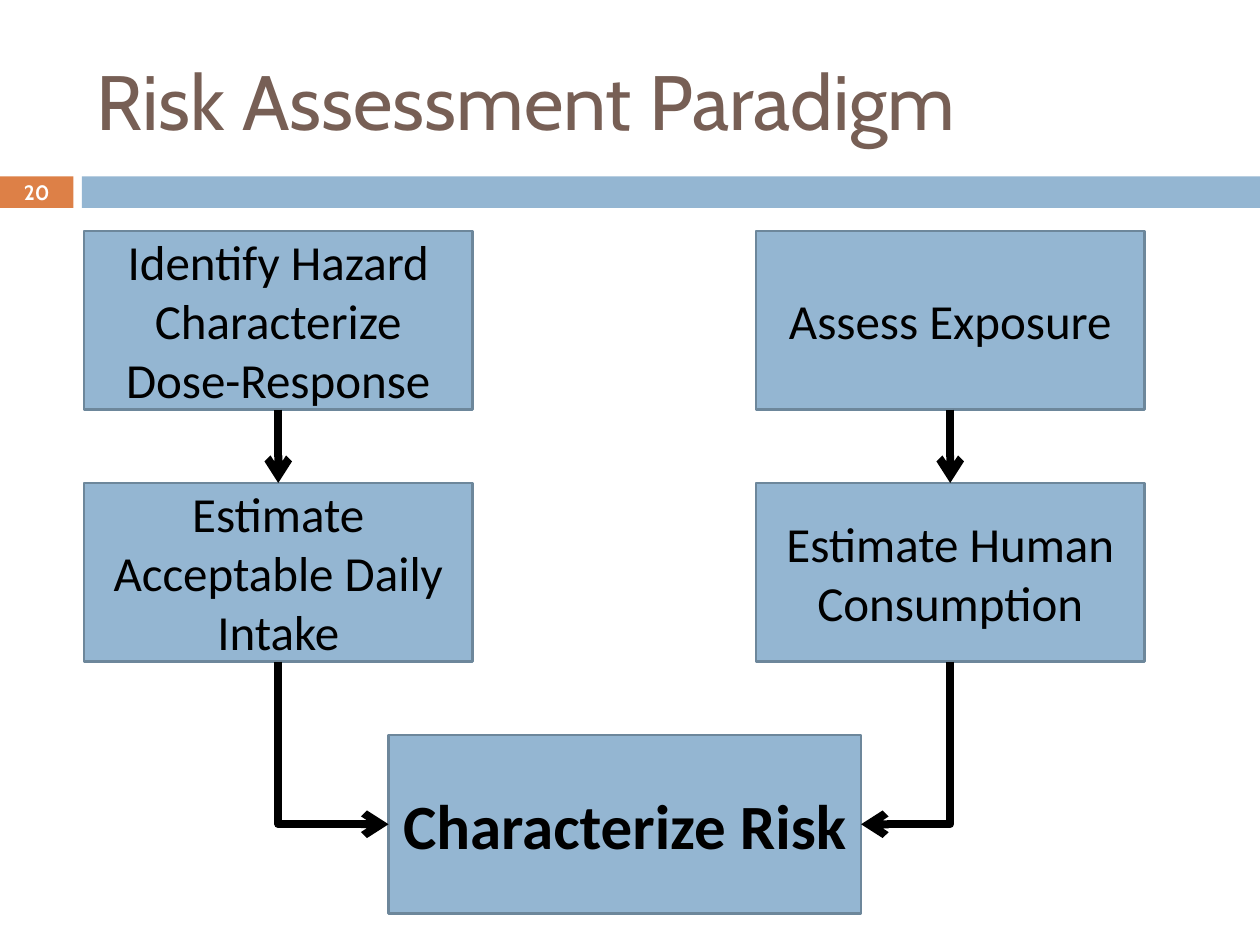
"""Build the risk assessment flow slide."""
from dataclasses import dataclass
from typing import Optional

from lxml.etree import SubElement
from pptx import Presentation
from pptx.dml.color import RGBColor
from pptx.enum.shapes import MSO_CONNECTOR as CONN, MSO_SHAPE as SHAPE
from pptx.enum.text import MSO_ANCHOR as ANCHOR, PP_ALIGN as ALIGN
from pptx.oxml.ns import qn
from pptx.util import Pt

BLUE, EDGE, ORANGE, BROWN = "94B6D2", "6D879B", "DD8047", "775F55"
BLACK, WHITE = "000000", "FFFFFF"
LEFT, RIGHT, MIDDLE = 48, 432, 222
ROWS = [132 + 144 * i for i in range(3)]
BODY = {"name": "Calibri", "size": Pt(28), "bold": False}
RESULT = {"name": "Calibri", "size": Pt(36), "bold": True}
TITLE = {"name": "Cabin", "size": Pt(44), "bold": False}
NUMBER = {"name": "Cabin", "size": Pt(11.9), "bold": True}
BOTTOM, TOP, LEFT_SIDE, RIGHT_SIDE = 2, 0, 1, 3


@dataclass
class Box:
    text: str
    x: float
    y: float
    w: float = 222
    h: float = 102
    fmt: Optional[dict] = None


@dataclass
class Arrow:
    start: str
    end: str
    side: int = TOP


BOXES = [
    Box("Identify Hazard Characterize Dose-Response", LEFT, ROWS[0]),
    Box("Assess Exposure", RIGHT, ROWS[0]),
    Box("Estimate Acceptable Daily Intake", LEFT, ROWS[1]),
    Box("Estimate Human Consumption", RIGHT, ROWS[1]),
    Box("Characterize Risk", MIDDLE, ROWS[2], w=270, fmt=RESULT),
]
ARROWS = [
    Arrow(BOXES[0].text, BOXES[2].text),
    Arrow(BOXES[1].text, BOXES[3].text),
    Arrow(BOXES[2].text, BOXES[4].text, LEFT_SIDE),
    Arrow(BOXES[3].text, BOXES[4].text, RIGHT_SIDE),
]


def rgb(color: str) -> RGBColor:
    """Turn a hex string into a colour."""
    return RGBColor.from_string(color)


def add_rect(s, x: float, y: float, w: float, h: float, fill: str, line: Optional[str] = None):
    """Draw a flat rectangle, outlined when a line colour is given."""
    sp = s.shapes.add_shape(SHAPE.RECTANGLE, Pt(x), Pt(y), Pt(w), Pt(h))
    sp.shadow.inherit = False
    sp.fill.solid()
    sp.fill.fore_color.rgb = rgb(fill)
    if line:
        sp.line.color.rgb = rgb(line)
        sp.line.width = Pt(1.5)
    else:
        sp.line.fill.background()
    return sp


def write(sp, text: str, fmt: dict, color: str, align=ALIGN.CENTER) -> None:
    """Put one formatted paragraph in a shape."""
    tf = sp.text_frame
    tf.word_wrap, tf.vertical_anchor = True, ANCHOR.MIDDLE
    p = tf.paragraphs[0]
    p.alignment = align
    r = p.add_run()
    r.text = text
    for key, value in fmt.items():
        setattr(r.font, key, value)
    r.font.color.rgb = rgb(color)


def bend(c, side: int) -> None:
    """Turn a joined connector into one that runs down, then sideways."""
    x1, y1, x2, y2 = c.begin_x, c.begin_y, c.end_x, c.end_y
    w, h = y2 - y1, abs(x2 - x1)
    c.left, c.top = (x1 + x2 - w) // 2, (y1 + y2 - h) // 2
    c.width, c.height = w, h
    xfrm = c._element.spPr.find(qn("a:xfrm"))
    for key in ("flipH", "flipV"):
        xfrm.attrib.pop(key, None)
    if side == LEFT_SIDE:
        xfrm.set("flipH", "1")
    xfrm.set("rot", str((270 if side == LEFT_SIDE else 90) * 60000))
    c._element.spPr.find(qn("a:prstGeom")).set("prst", "bentConnector2")


def add_arrow(s, arrow: Arrow, shapes: dict) -> None:
    """Join two boxes with a thick arrow."""
    straight = arrow.side == TOP
    c = s.shapes.add_connector(CONN.STRAIGHT if straight else CONN.ELBOW, 0, 0, 0, 0)
    c.begin_connect(shapes[arrow.start], BOTTOM)
    c.end_connect(shapes[arrow.end], arrow.side)
    if not straight:
        bend(c, arrow.side)
    c.line.color.rgb = rgb(BLACK)
    c.line.width = Pt(4.5)
    SubElement(c.line._get_or_add_ln(), qn("a:tailEnd"), type="arrow")
    SubElement(c._element.spPr, qn("a:effectLst"))


def main() -> None:
    """Build and save the slide."""
    prs = Presentation()
    prs.slide_width, prs.slide_height = Pt(720), Pt(540)
    s = prs.slides.add_slide(prs.slide_layouts[6])

    tag = add_rect(s, 0, 100.8, 42, 18, ORANGE)
    for side in ("left", "top", "right", "bottom"):
        setattr(tag.text_frame, f"margin_{side}", 0)
    write(tag, "20", NUMBER, WHITE)
    add_rect(s, 46.8, 100.8, 673.2, 18, BLUE)

    title = s.shapes.add_textbox(Pt(48), Pt(18), Pt(642), Pt(78))
    write(title, "Risk Assessment Paradigm", TITLE, BROWN, ALIGN.LEFT)

    shapes = {}
    for b in BOXES:
        shapes[b.text] = add_rect(s, b.x, b.y, b.w, b.h, BLUE, EDGE)
        write(shapes[b.text], b.text, b.fmt or BODY, BLACK)
    for arrow in ARROWS:
        add_arrow(s, arrow, shapes)

    prs.save("out.pptx")


if __name__ == "__main__":
    main()
